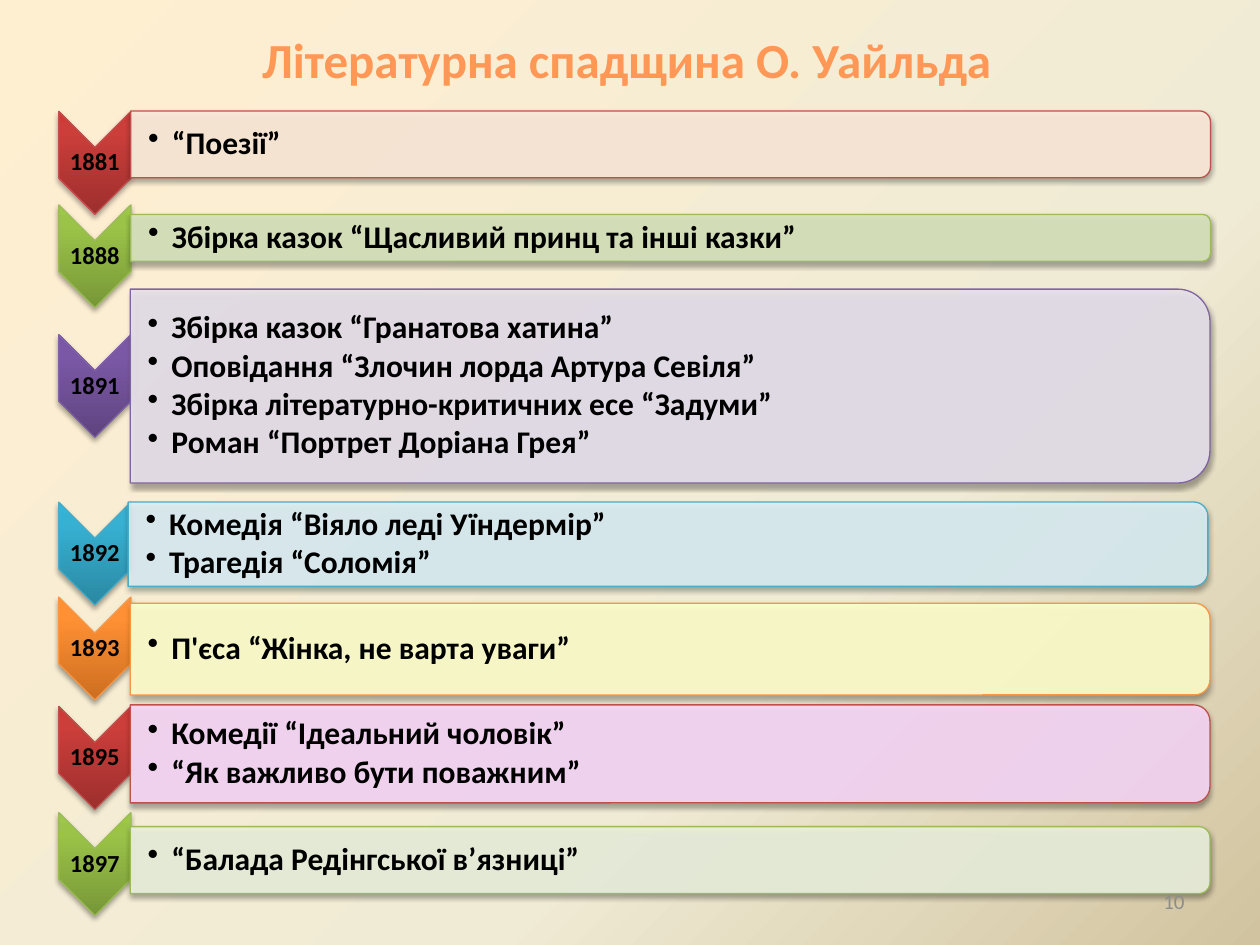
from copy import deepcopy

from lxml.etree import SubElement
from pptx import Presentation
from pptx.dml.color import RGBColor
from pptx.enum.shapes import MSO_SHAPE
from pptx.enum.text import MSO_ANCHOR, PP_ALIGN
from pptx.oxml import parse_xml
from pptx.oxml.ns import nsdecls, qn
from pptx.util import Pt

COLORS = {
    "text": "000000", "page": "8C8C8C",
    "red": "C0504D", "green": "9BBB59", "purple": "8064A2",
    "blue": "4BACC6", "orange": "F79646",
}
BACKGROUND = [(0, "FFEFD1"), (0.65, "F0EBD5"), (1, "D1C39F")]
TITLE = [(0, "9D4700"), (0.78, "FF9856"), (1, "FFF5F1")]
CHEVRONS = {
    "red": [(0, "9C2F2D"), (0.8, "CB3E3A"), (1, "CE3B37")],
    "green": [(0, "779737"), (0.8, "9BC348"), (1, "9DC746")],
    "purple": [(0, "5F4480"), (0.8, "7B58A6"), (1, "7C57A8")],
    "blue": [(0, "2A88A2"), (0.8, "37B1D2"), (1, "34B4D6")],
    "orange": [(0, "CC6E20"), (0.8, "FF9034"), (1, "FF9136")],
}
SHADOW = (
    f'<a:effectLst {nsdecls("a")}><a:outerShdw blurRad="39400" dist="22900" '
    'dir="5400000" rotWithShape="0"><a:srgbClr val="000000">'
    '<a:alpha val="35000"/></a:srgbClr></a:outerShdw></a:effectLst>'
)
# year, accent, panel fill, chevron middle, panel left, panel middle, panel height, works
ROWS = [
    ("1881", "red", "FDEADA", 93.1, 74.7, 82.5, 38.2, ["“Поезії”"]),
    ("1888", "green", "D7E4BD", 146.5, 74.7, 135.9, 26.8,
     ["Збірка казок “Щасливий принц та інші казки”"]),
    ("1891", "purple", "E6E0EC", 220.6, 74.4, 220.6, 110.8,
     ["Збірка казок “Гранатова хатина”",
      "Оповідання “Злочин лорда Артура Севіля”",
      "Збірка літературно-критичних есе “Задуми”",
      "Роман “Портрет Доріана Грея”"]),
    ("1892", "blue", "DBEEF4", 316.4, 73.2, 311, 48.2,
     ["Комедія “Віяло леді Уїндермір”", "Трагедія “Соломія”"]),
    ("1893", "orange", "FFFFCC", 370.6, 74.4, 370.9, 52.4,
     ["П'єса “Жінка, не варта уваги”"]),
    ("1895", "red", "F7D7F7", 433.1, 74.4, 430.8, 56,
     ["Комедії “Ідеальний чоловік”", "“Як важливо бути поважним”"]),
    ("1897", "green", "EBF1DE", 493.8, 74.4, 491.5, 38.2,
     ["“Балада Редінгської в’язниці”"]),
]
CHEVRON_LEFT, CHEVRON_WIDTH, CHEVRON_HEIGHT = 33.6, 41.2, 58.8
PANEL_WIDTH = 617

prs = Presentation()
prs.slide_width, prs.slide_height = Pt(720), Pt(540)
slide = prs.slides.add_slide(prs.slide_layouts[6])


def apply_gradient(fill, stops, angle):
    """Give fill three (position, hex) stops; the angle runs counter-clockwise."""
    fill.gradient()
    fill.gradient_angle = angle
    stop_list = fill._xPr.find(".//" + qn("a:gsLst"))
    stop_list.getparent().set("rotWithShape", "0")
    stop_list.append(deepcopy(stop_list[0]))
    for stop, (position, color) in zip(fill.gradient_stops, stops):
        stop.position = position
        stop.color.rgb = RGBColor.from_string(color)


def add_text(box, lines, size, align, color="text", bold=True, margins=(0.7, 0.7), spacing=None):
    frame = slide.shapes.add_textbox(*map(Pt, box)).text_frame
    frame_format = {
        "word_wrap": True, "vertical_anchor": MSO_ANCHOR.MIDDLE,
        "margin_left": Pt(margins[0]), "margin_right": Pt(margins[1]),
        "margin_top": Pt(0.7), "margin_bottom": Pt(0.7),
    }
    for name, value in frame_format.items():
        setattr(frame, name, value)
    frame.text = "\n".join(lines)
    for paragraph in frame.paragraphs:
        paragraph.alignment = align
        paragraph.line_spacing = spacing
        font = paragraph.runs[0].font
        for name, value in {"name": "Calibri", "size": Pt(size), "bold": bold}.items():
            setattr(font, name, value)
        font.color.rgb = RGBColor.from_string(COLORS[color])
    return frame.paragraphs


apply_gradient(slide.background.fill, BACKGROUND, 315)
heading = add_text((34, 16.5, 648, 34), ["Літературна спадщина О. Уайльда"], 28, PP_ALIGN.CENTER)
apply_gradient(heading[0].runs[0].font.fill, TITLE, 270)

for year, accent, tint, year_middle, left, middle, height, works in ROWS:
    # Both shapes are turned by 90°, so each is placed by its centre
    outlines = [
        (MSO_SHAPE.CHEVRON, CHEVRON_LEFT + CHEVRON_WIDTH / 2, year_middle,
         CHEVRON_HEIGHT, CHEVRON_WIDTH),
        (MSO_SHAPE.ROUND_2_SAME_RECTANGLE, left + PANEL_WIDTH / 2, middle,
         height, PANEL_WIDTH),
    ]
    for kind, x, y, across, along in outlines:
        shape = slide.shapes.add_shape(
            kind, Pt(x - across / 2), Pt(y - along / 2), Pt(across), Pt(along))
        shape.rotation = 90
        if kind == MSO_SHAPE.CHEVRON:
            apply_gradient(shape.fill, CHEVRONS[accent], 90)
        else:
            shape.fill.solid()
            shape.fill.fore_color.rgb = RGBColor.from_string(tint)
            tint_color = shape._element.spPr.find(qn("a:solidFill"))[0]
            SubElement(tint_color, qn("a:alpha")).set("val", "90000")
        shape.line.color.rgb = RGBColor.from_string(COLORS[accent])
        shape.line.width = Pt(0.75)
        shape._element.spPr.append(parse_xml(SHADOW))

    add_text((CHEVRON_LEFT, year_middle - 9, CHEVRON_WIDTH, 18), [year], 14,
             PP_ALIGN.CENTER, spacing=0.9)
    entries = add_text((left, middle - height / 2, PANEL_WIDTH - 3, height), works, 18,
                       PP_ALIGN.LEFT, margins=(10, 0.7), spacing=0.9)
    for entry in entries:
        entry.space_after = Pt(2.5)
        properties = entry._p.get_or_add_pPr()
        properties.set("marL", str(Pt(13.5)))
        properties.set("indent", str(Pt(-13.5)))
        SubElement(properties, qn("a:buChar")).set("char", "•")

add_text((516, 500.5, 168, 29), ["10"], 12, PP_ALIGN.RIGHT, "page", bold=False, margins=(7.2, 7.2))

prs.save("out.pptx")
